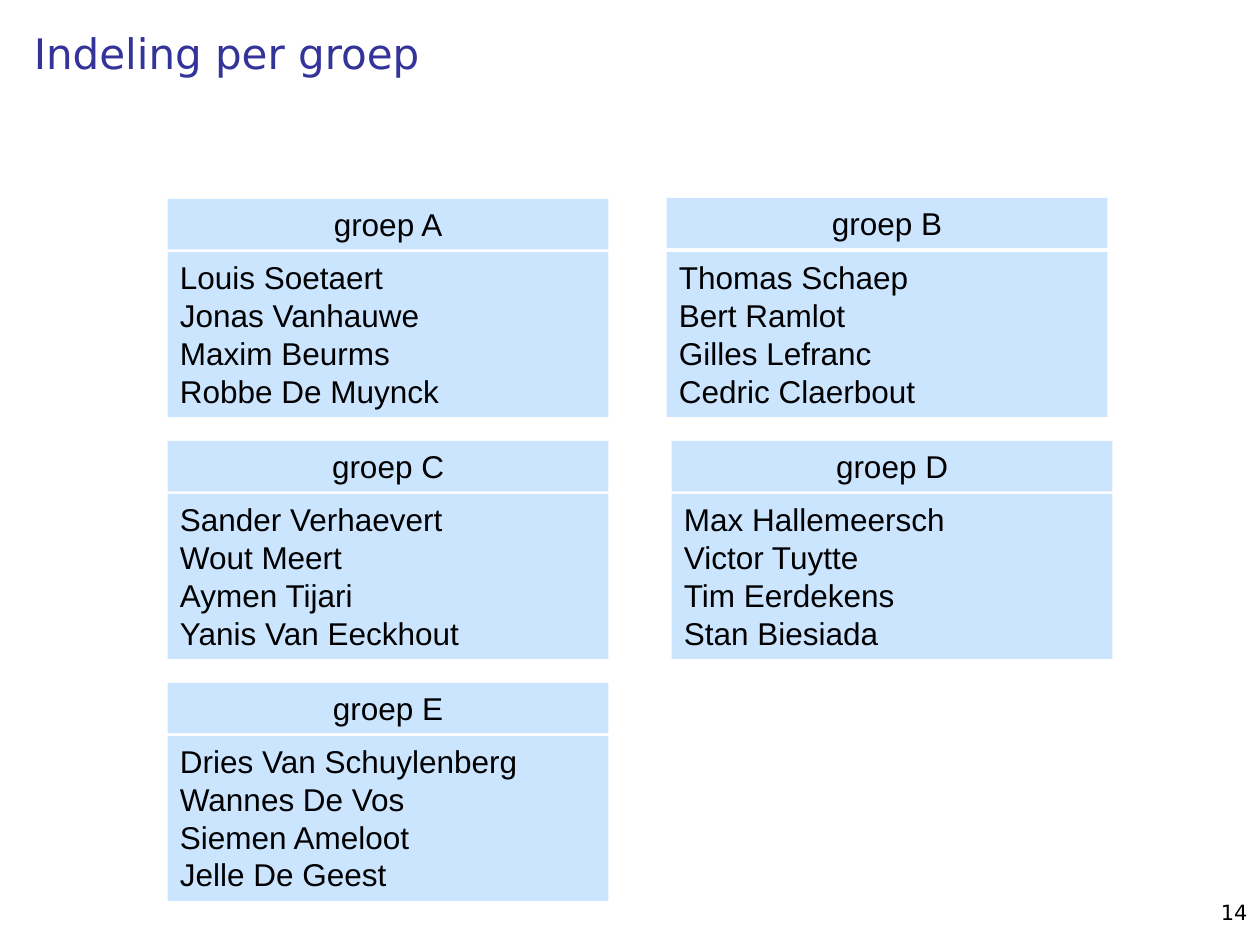
from dataclasses import dataclass

from lxml import etree
from pptx import Presentation
from pptx.dml.color import RGBColor
from pptx.enum import shapes, text
from pptx.oxml.ns import qn
from pptx.util import Inches, Pt


@dataclass(frozen=True)
class Theme:
    title_font: str = "DejaVu Sans"
    body_font: str = "Arial"
    title_color: str = "333399"
    text_color: str = "000000"
    box_color: str = "99CCFF"
    box_opacity: int = 50
    title_size: int = 24
    body_size: int = 18
    number_size: int = 12


class SlideBuilder:
    def __init__(self, slide, theme):
        self.slide = slide
        self.theme = theme

    def set_text(self, sp, content, font, size, color,
                 align=text.PP_ALIGN.LEFT, anchor=text.MSO_ANCHOR.TOP):
        tf = sp.text_frame
        tf.text = content
        tf.word_wrap = True
        tf.vertical_anchor = anchor
        for p in tf.paragraphs:
            p.alignment = align
            for r in p.runs:
                r.font.name = font
                r.font.size = Pt(size)
                r.font.color.rgb = RGBColor.from_string(color)

    def label(self, content, box, size, color, **layout):
        sp = self.slide.shapes.add_textbox(*map(Inches, box))
        self.set_text(sp, content, self.theme.title_font, size, color, **layout)

    def panel(self, content, box, align=text.PP_ALIGN.LEFT):
        """Add a translucent rectangle with text."""
        t = self.theme
        sp = self.slide.shapes.add_shape(
            shapes.MSO_SHAPE.RECTANGLE, *map(Inches, box))
        sp.shadow.inherit = False
        sp.line.fill.background()
        sp.fill.solid()
        sp.fill.fore_color.rgb = RGBColor.from_string(t.box_color)
        color = sp.element.spPr.find(qn("a:solidFill"))[0]
        etree.SubElement(color, qn("a:alpha"), val=str(t.box_opacity * 1000))
        self.set_text(sp, content, t.body_font, t.body_size, t.text_color, align)
        sp.text_frame.auto_size = text.MSO_AUTO_SIZE.SHAPE_TO_FIT_TEXT

    def group(self, name, members, left, header_top, body_top):
        width = 3.5
        self.panel("\n".join(members), (left, body_top, width, 1.31))
        self.panel(name, (left, header_top, width, 0.4), text.PP_ALIGN.CENTER)


ROW_TOP, ROW_PITCH, HEADER_RISE = 2.0, 1.92, 0.42
LEFT_COLUMN = 1.33

# name, members, left, row, extra lift of the header
GROUPS = [
    ("groep A", ["Louis Soetaert", "Jonas Vanhauwe",
                 "Maxim Beurms", "Robbe De Muynck"], LEFT_COLUMN, 0, 0),
    ("groep B", ["Thomas Schaep", "Bert Ramlot",
                 "Gilles Lefranc", "Cedric Claerbout"], 5.29, 0, 0.01),
    ("groep C", ["Sander Verhaevert", "Wout Meert",
                 "Aymen Tijari", "Yanis Van Eeckhout"], LEFT_COLUMN, 1, 0),
    ("groep D", ["Max Hallemeersch", "Victor Tuytte",
                 "Tim Eerdekens", "Stan Biesiada"], 5.33, 1, 0),
    ("groep E", ["Dries Van Schuylenberg", "Wannes De Vos",
                 "Siemen Ameloot", "Jelle De Geest"], LEFT_COLUMN, 2, 0),
]


def main():
    prs = Presentation()
    prs.slide_width, prs.slide_height = Inches(10), Inches(7.5)
    theme = Theme()
    s = SlideBuilder(prs.slides.add_slide(prs.slide_layouts[6]), theme)

    s.label("14", (9.25, 7.06, 0.75, 0.33), theme.number_size, theme.text_color,
            align=text.PP_ALIGN.RIGHT, anchor=text.MSO_ANCHOR.BOTTOM)
    s.label("Indeling per groep", (0.17, 0.17, 9.67, 0.92),
            theme.title_size, theme.title_color)
    for name, members, left, row, lift in GROUPS:
        body_top = ROW_TOP + row * ROW_PITCH
        s.group(name, members, left, body_top - HEADER_RISE - lift, body_top)

    prs.save("out.pptx")


if __name__ == "__main__":
    main()
